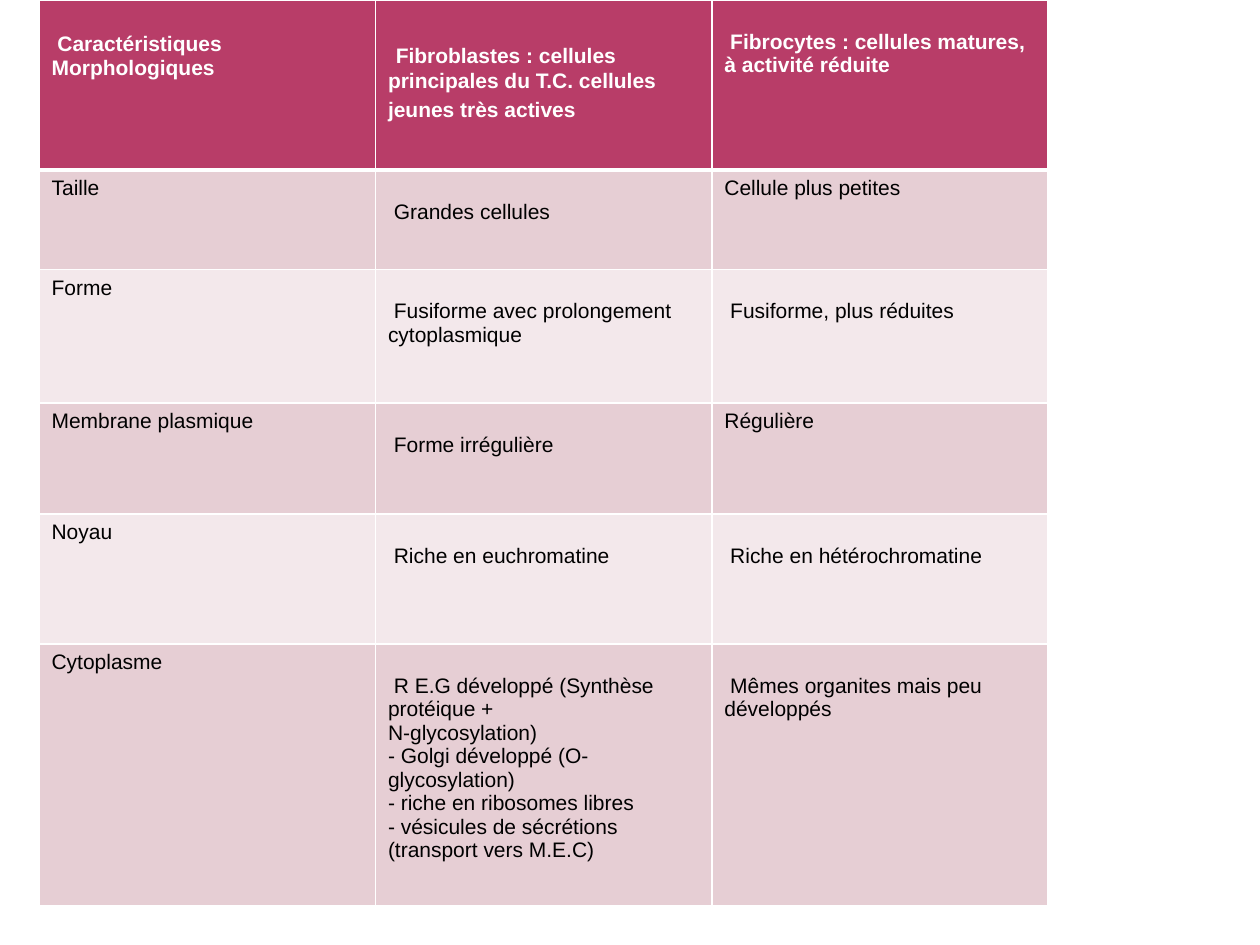
"""Build a slide comparing fibroblasts and fibrocytes in one table."""
from dataclasses import dataclass

from lxml.etree import SubElement
from pptx import Presentation
from pptx.dml.color import RGBColor as RGB
from pptx.oxml.ns import qn
from pptx.util import Inches, Pt


@dataclass(frozen=True)
class Theme:
    font: str = "Arial"
    size: float = 12
    large: float = 16
    header: str = "B83D68"
    bands: tuple[str, str] = ("E6CED4", "F3E8EB")
    light: str = "FFFFFF"
    dark: str = "000000"
    thin: float = 1
    thick: float = 3


@dataclass(frozen=True)
class Entry:
    lines: tuple[str, ...]
    top: float = 0.05
    edge_size: float | None = None


THEME = Theme()
SLIDE_W, SLIDE_H = 10, 7.5
LEFT, COL_W, COLS = 0.31, 2.67, 3
ROW_H = (1.35, 0.79, 1.06, 0.88, 1.03, 2.08)
LOW = 0.24


def plain(*lines: str) -> Entry:
    return Entry(lines)


def lowered(*lines: str) -> Entry:
    return Entry(lines, LOW)


ROWS = (
    (
        Entry((" Caractéristiques", "Morphologiques"), 0.26),
        Entry(("Fibroblastes : cellules principales du T.C. cellules "
               "jeunes très actives",), 0.3, THEME.large),
        lowered(" Fibrocytes : cellules matures, à activité réduite"),
    ),
    (plain("Taille"), lowered(" Grandes cellules"), plain("Cellule plus petites")),
    (
        plain("Forme"),
        lowered(" Fusiforme avec prolongement cytoplasmique"),
        lowered(" Fusiforme, plus réduites"),
    ),
    (plain("Membrane plasmique"), lowered(" Forme irrégulière"), plain("Régulière")),
    (
        plain("Noyau"),
        lowered(" Riche en euchromatine"),
        lowered(" Riche en hétérochromatine"),
    ),
    (
        plain("Cytoplasme"),
        lowered(
            " R E.G développé (Synthèse protéique +",
            "N-glycosylation)",
            "- Golgi développé (O-glycosylation)",
            "- riche en ribosomes libres",
            "- vésicules de sécrétions (transport vers M.E.C)",
        ),
        lowered(" Mêmes organites mais peu développés"),
    ),
)


def add_text(p, text: str, *, size: float, color: str, bold: bool) -> None:
    r = p.add_run()
    r.text = text
    r.font.name, r.font.size, r.font.bold = THEME.font, Pt(size), bold
    r.font.color.rgb = RGB.from_string(color)


def set_borders(cell, top: float, bottom: float) -> None:
    tc_pr = cell._tc.get_or_add_tcPr()
    widths = {"L": THEME.thin, "R": THEME.thin, "T": top, "B": bottom}
    for side, width in widths.items():
        ln = SubElement(tc_pr, qn(f"a:ln{side}"), w=str(Pt(width)))
        fill = SubElement(ln, qn("a:solidFill"))
        SubElement(fill, qn("a:srgbClr"), val=THEME.light)


def fill_cell(cell, entry: Entry, row: int) -> None:
    head = row == 0
    set_borders(cell, THEME.thick if row == 1 else THEME.thin,
                THEME.thick if head else THEME.thin)
    cell.fill.solid()
    color = THEME.header if head else THEME.bands[(row - 1) % 2]
    cell.fill.fore_color.rgb = RGB.from_string(color)
    cell.margin_top = Inches(entry.top)
    style = {"color": THEME.light if head else THEME.dark, "bold": head}
    tf = cell.text_frame
    for i, line in enumerate(entry.lines):
        p = tf.add_paragraph() if i else tf.paragraphs[0]
        if entry.edge_size:
            add_text(p, " ", size=entry.edge_size, **style)
        add_text(p, line, size=THEME.size, **style)
        if entry.edge_size:
            add_text(p, " ", size=entry.edge_size, **style)


def main() -> None:
    prs = Presentation()
    prs.slide_width, prs.slide_height = Inches(SLIDE_W), Inches(SLIDE_H)
    s = prs.slides.add_slide(prs.slide_layouts[6])
    table = s.shapes.add_table(len(ROWS), COLS, Inches(LEFT), 0,
                               Inches(COL_W * COLS), Inches(sum(ROW_H))).table
    for column in table.columns:
        column.width = Inches(COL_W)
    for i, (entries, height) in enumerate(zip(ROWS, ROW_H)):
        table.rows[i].height = Inches(height)
        for j, entry in enumerate(entries):
            fill_cell(table.cell(i, j), entry, i)
    prs.save("out.pptx")


if __name__ == "__main__":
    main()
